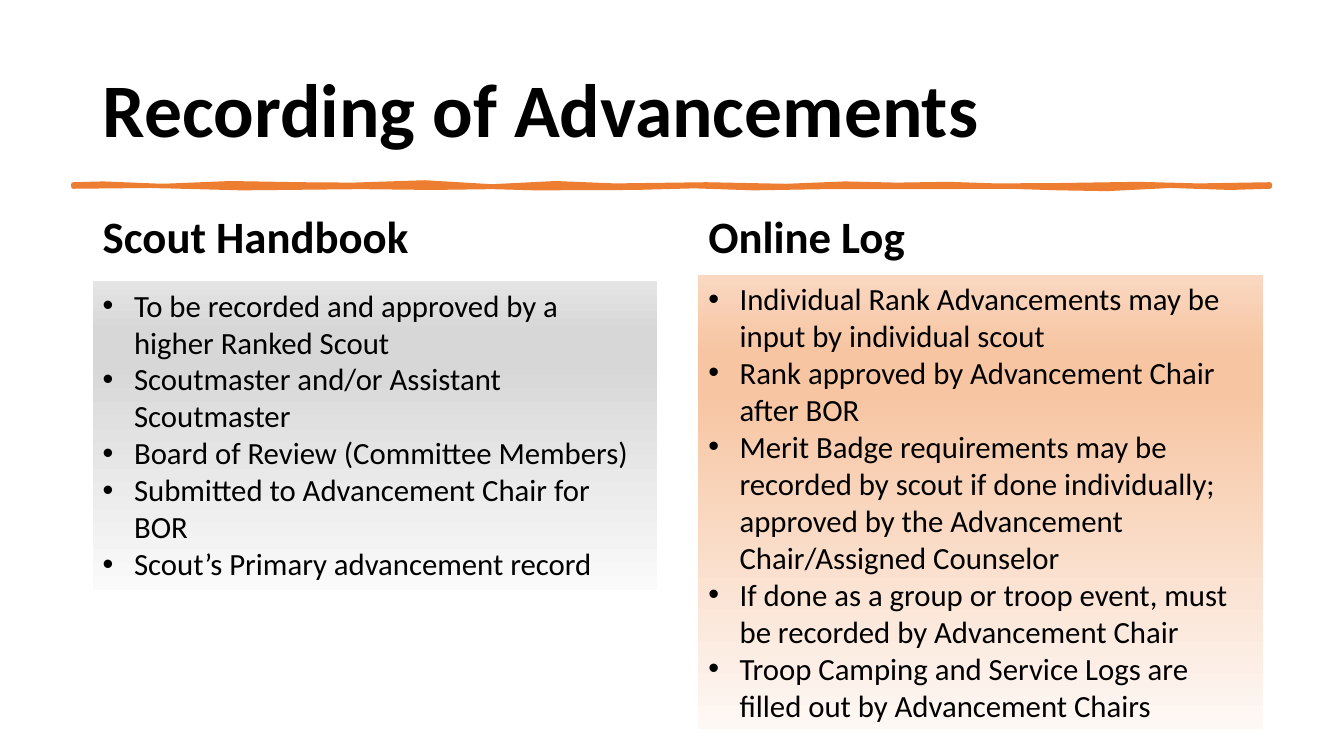
from copy import deepcopy

from lxml.etree import SubElement
from pptx import Presentation
from pptx.dml.color import RGBColor
from pptx.enum.shapes import MSO_SHAPE as Shape
from pptx.enum.text import MSO_ANCHOR as Anchor, MSO_AUTO_SIZE as AutoSize, PP_ALIGN as Align
from pptx.oxml.ns import qn
from pptx.util import Cm, Pt

COLOURS = {"text": "000000", "rule": "ED7D31"}
GRADIENTS = {
    "grey": ["FAFAFA", "D7D7D7", "D7D7D7", "E4E4E4"],
    "orange": ["FEF8F5", "F7C5A2", "F7C5A2", "FAD8C1"],
}
STOPS = [0, 0.74, 0.83, 1]
FORMATS = {
    "title": {"name": "Calibri", "size": Pt(54), "bold": True},
    "heading": {"name": "Calibri", "size": Pt(32), "bold": True},
    "bullet": {"name": "Calibri", "size": Pt(22), "bold": False},
}
SPACING = {
    "title": {"alignment": Align.LEFT, "line_spacing": 0.9, "space_before": Pt(0)},
    "heading": {"alignment": Align.LEFT, "line_spacing": 0.9, "space_before": Pt(10)},
    "bullet": {"alignment": Align.LEFT},
}
COLUMNS = [
    {
        "heading": "Scout Handbook", "left": 2.34, "top": 7.09, "height": 7.77,
        "gradient": "grey",
        "bullets": [
            "To be recorded and approved by a \vhigher Ranked Scout",
            "Scoutmaster and/or Assistant Scoutmaster",
            "Board of Review (Committee Members)",
            "Submitted to Advancement Chair for BOR",
            "Scout’s Primary advancement record",
        ],
    },
    {
        "heading": "Online Log", "left": 17.6, "top": 6.93, "height": 11.43,
        "gradient": "orange",
        "bullets": [
            "Individual Rank Advancements may be input by individual scout",
            "Rank approved by Advancement Chair after BOR",
            "Merit Badge requirements may be recorded by scout if done individually; "
            "approved by the Advancement Chair/Assigned Counselor",
            "If done as a group or troop event, must be recorded by Advancement Chair",
            "Troop Camping and Service Logs are filled out by Advancement Chairs",
        ],
    },
]
RULE_TOP = [
    (1.85, 4.65), (2.6, 4.63), (4.1, 4.69), (5.8, 4.62), (7.6, 4.65), (8.9, 4.66),
    (10.7, 4.6), (12.4, 4.7), (14, 4.62), (15.5, 4.68), (17.8, 4.65), (19.8, 4.69),
    (21.3, 4.63), (22.6, 4.66), (23.9, 4.64), (25.1, 4.68), (26.7, 4.67),
    (28.7, 4.64), (30.2, 4.68), (32, 4.65),
]
RULE_BOTTOM = [
    (32, 4.7), (31, 4.73), (29.5, 4.68), (27.9, 4.76), (26.7, 4.74), (25.4, 4.7),
    (23.4, 4.71), (20.8, 4.71), (19, 4.74), (17.5, 4.69), (16, 4.73), (13.5, 4.74),
    (12.4, 4.71), (10.9, 4.73), (9.1, 4.71), (6.1, 4.74), (3.8, 4.68), (1.85, 4.7),
]


def set_all(target, values):
    for name, value in values.items():
        setattr(target, name, value)


def write_para(para, text, kind):
    para.text = text
    set_all(para, SPACING[kind])
    for span in para.runs:
        set_all(span.font, FORMATS[kind])
        span.font.color.rgb = RGBColor.from_string(COLOURS["text"])


def add_bullet(para):
    properties = para._p.get_or_add_pPr()
    properties.set("marL", str(Cm(0.79)))
    properties.set("indent", str(-Cm(0.79)))
    SubElement(properties, qn("a:buFont")).set("typeface", "Arial")
    SubElement(properties, qn("a:buChar")).set("char", "•")


def set_title(page, text):
    title = page.shapes.title
    set_all(title, {"left": Cm(2.34), "top": Cm(1.02), "width": Cm(29.21), "height": Cm(3.68)})
    set_all(title.text_frame, {"vertical_anchor": Anchor.MIDDLE, "auto_size": AutoSize.NONE})
    write_para(title.text_frame.paragraphs[0], text, "title")


def add_rule(page):
    points = [(Cm(x), Cm(y)) for x, y in RULE_TOP + RULE_BOTTOM]
    builder = page.shapes.build_freeform(*points[0])
    builder.add_line_segments(points[1:], close=True)
    rule = builder.convert_to_shape()
    rule.shadow.inherit = False
    rule.line.width = Pt(3.25)
    for fill in (rule.fill, rule.line.fill):
        fill.solid()
        fill.fore_color.rgb = RGBColor.from_string(COLOURS["rule"])


def add_heading(page, text, left):
    box = page.shapes.add_textbox(Cm(left), Cm(5.28), Cm(14.35), Cm(1.65))
    box.text_frame.word_wrap = True
    write_para(box.text_frame.paragraphs[0], text, "heading")


def fill_gradient(box, colours):
    box.fill.gradient()
    box.fill.gradient_angle = 90
    stop_list = box._element.spPr.find(qn("a:gradFill")).find(qn("a:gsLst"))
    while len(stop_list) < len(STOPS):
        stop_list.append(deepcopy(stop_list[0]))
    for stop, position, colour in zip(box.fill.gradient_stops, STOPS, colours):
        stop.position = position
        stop.color.rgb = RGBColor.from_string(colour)


def add_bullet_box(page, column):
    box = page.shapes.add_shape(
        Shape.RECTANGLE, Cm(column["left"]), Cm(column["top"]), Cm(14.22), Cm(column["height"]))
    box.shadow.inherit = False
    box.line.fill.background()
    fill_gradient(box, GRADIENTS[column["gradient"]])
    frame = box.text_frame
    set_all(frame, {"word_wrap": True, "vertical_anchor": Anchor.TOP,
                    "auto_size": AutoSize.SHAPE_TO_FIT_TEXT})
    for index, text in enumerate(column["bullets"]):
        para = frame.add_paragraph() if index else frame.paragraphs[0]
        write_para(para, text, "bullet")
        add_bullet(para)


def main():
    deck = Presentation()
    set_all(deck, {"slide_width": Cm(33.87), "slide_height": Cm(19.05)})
    page = deck.slides.add_slide(deck.slide_layouts[5])
    set_title(page, "Recording of Advancements")
    add_rule(page)
    for column in COLUMNS:
        add_heading(page, column["heading"], column["left"])
        add_bullet_box(page, column)
    deck.save("out.pptx")


if __name__ == "__main__":
    main()
